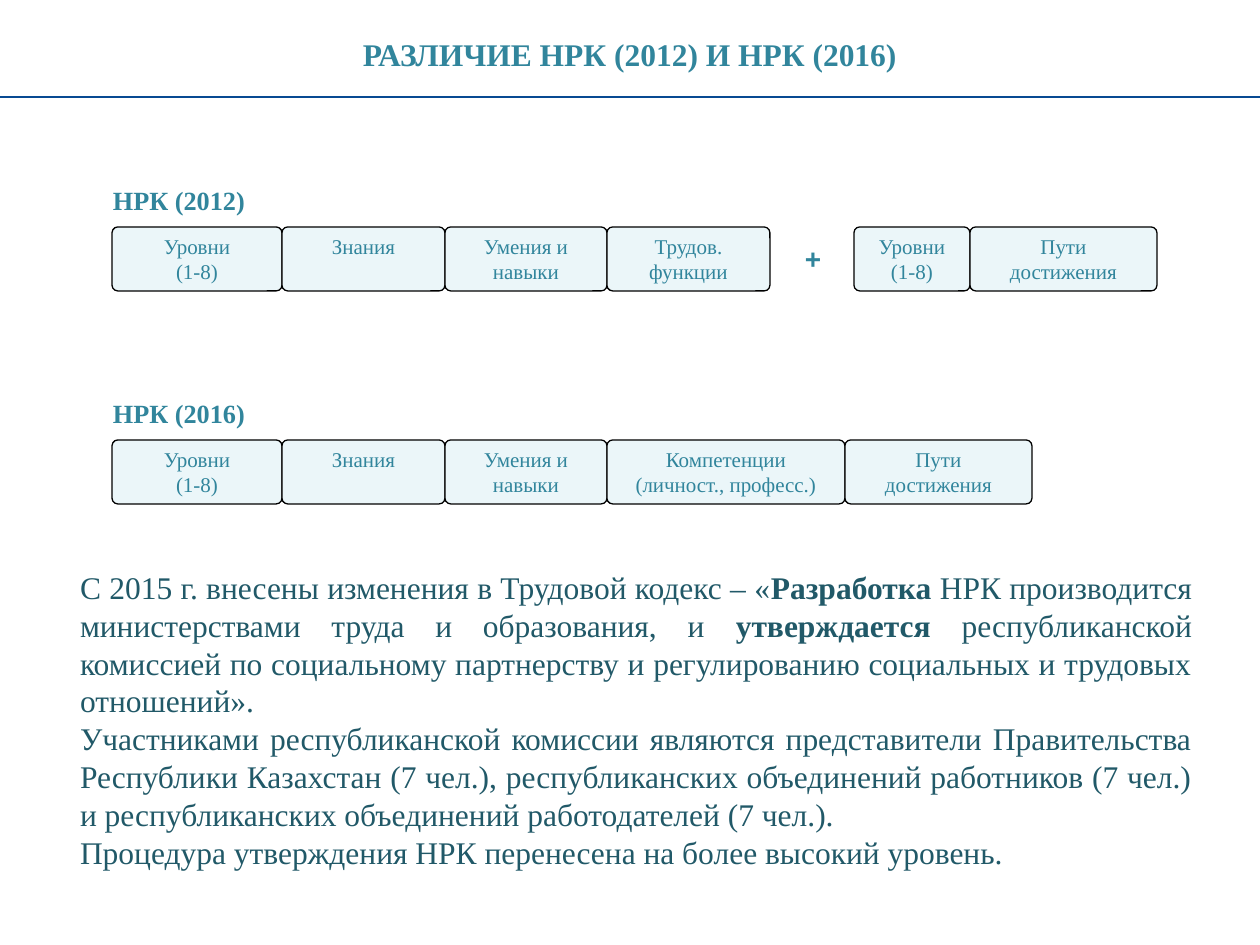
from lxml import etree
from pptx import Presentation, util as u
from pptx.dml.color import RGBColor
from pptx.enum import shapes, text
from pptx.oxml.ns import qn

COLORS = {"teal": "31859C", "dark": "215968", "pale": "EBF6F9",
          "rule": "084A92", "black": "000000"}
TOP, MIDDLE = text.MSO_ANCHOR.TOP, text.MSO_ANCHOR.MIDDLE
LEFT, CENTER, JUSTIFY = (text.PP_ALIGN.LEFT, text.PP_ALIGN.CENTER,
                         text.PP_ALIGN.JUSTIFY)


def px(*vals):
    return [u.Emu(round(v * 914400 / 126)) for v in vals]


def write(shape, lines, size=12, font="Times New Roman", color="teal",
          bold=False, align=CENTER, anchor=TOP, pad=(0, 0)):
    """Fill a shape with paragraphs; parts between asterisks turn bold."""
    frame = shape.text_frame
    frame.word_wrap = True
    frame.vertical_anchor = anchor
    frame.margin_left = frame.margin_right = px(pad[0])[0]
    frame.margin_top = frame.margin_bottom = px(pad[1])[0]
    for i, line in enumerate(lines):
        para = frame.paragraphs[0] if i == 0 else frame.add_paragraph()
        para.alignment = align
        for j, part in enumerate(line.split("*")):
            run = para.add_run()
            run.text = part
            run.font.size = u.Pt(size)
            run.font.name = font
            run.font.bold = bold or j % 2 == 1
            run.font.color.rgb = RGBColor.from_string(COLORS[color])


prs = Presentation()
prs.slide_width, prs.slide_height = px(1260, 945)
slide = prs.slides.add_slide(prs.slide_layouts[6])
items = slide.shapes

# Title and rule
write(items.add_textbox(*px(0, 29, 1260, 50)),
      ["РАЗЛИЧИЕ НРК (2012) И НРК (2016)"], size=18, bold=True, pad=(13, 6))
rule = items.add_connector(shapes.MSO_CONNECTOR.STRAIGHT, *px(0, 97, 1260, 97))
rule.line.color.rgb = RGBColor.from_string(COLORS["rule"])
rule.line.width = u.Pt(1)
etree.SubElement(rule._element.spPr, qn("a:effectLst"))

# Rows of touching boxes: label, top, then groups of (edges, texts)
levels = ["Уровни", "(1-8)"]
ways = ["Пути", "достижения"]
common = [levels, ["Знания"], ["Умения и навыки"]]
rows = [
    ("НРК (2012)", 227, [
        ([112, 282, 445, 607, 770], common + [["Трудов.", "функции"]]),
        ([854, 970, 1157], [levels, ways])]),
    ("НРК (2016)", 440, [
        ([112, 282, 445, 607, 845, 1032],
         common + [["Компетенции", "(личност., професс.)"], ways])]),
]
for label, top, groups in rows:
    write(items.add_textbox(*px(113, top - 44, 151, 34)), [label],
          size=15, bold=True, align=LEFT, anchor=MIDDLE)
    for edges, cells in groups:
        for left, right, lines in zip(edges, edges[1:], cells):
            box = items.add_shape(shapes.MSO_SHAPE.ROUNDED_RECTANGLE,
                                  *px(left, top, right - left, 64))
            box.adjustments[0] = 0.09
            box.shadow.inherit = False
            box.fill.solid()
            box.fill.fore_color.rgb = RGBColor.from_string(COLORS["pale"])
            box.line.color.rgb = RGBColor.from_string(COLORS["black"])
            box.line.width = u.Pt(0.75)
            write(box, lines, pad=(5, 5))

write(items.add_textbox(*px(789, 239, 48, 39)), ["+"],
      size=16, font="Arial", bold=True, anchor=MIDDLE)

# Explanation
write(items.add_textbox(*px(67, 562, 1138, 318)), [
    "С 2015 г. внесены изменения в Трудовой кодекс – «*Разработка *НРК "
    "производится министерствами труда и образования, и *утверждается* "
    "республиканской комиссией по социальному партнерству и регулированию "
    "социальных и трудовых отношений».",
    "Участниками республиканской комиссии являются представители "
    "Правительства Республики Казахстан (7 чел.), республиканских "
    "объединений работников (7 чел.) и республиканских объединений "
    "работодателей (7 чел.).",
    "Процедура утверждения НРК перенесена на более высокий уровень.",
], size=18, color="dark", align=JUSTIFY, pad=(13, 6))

prs.save("out.pptx")
